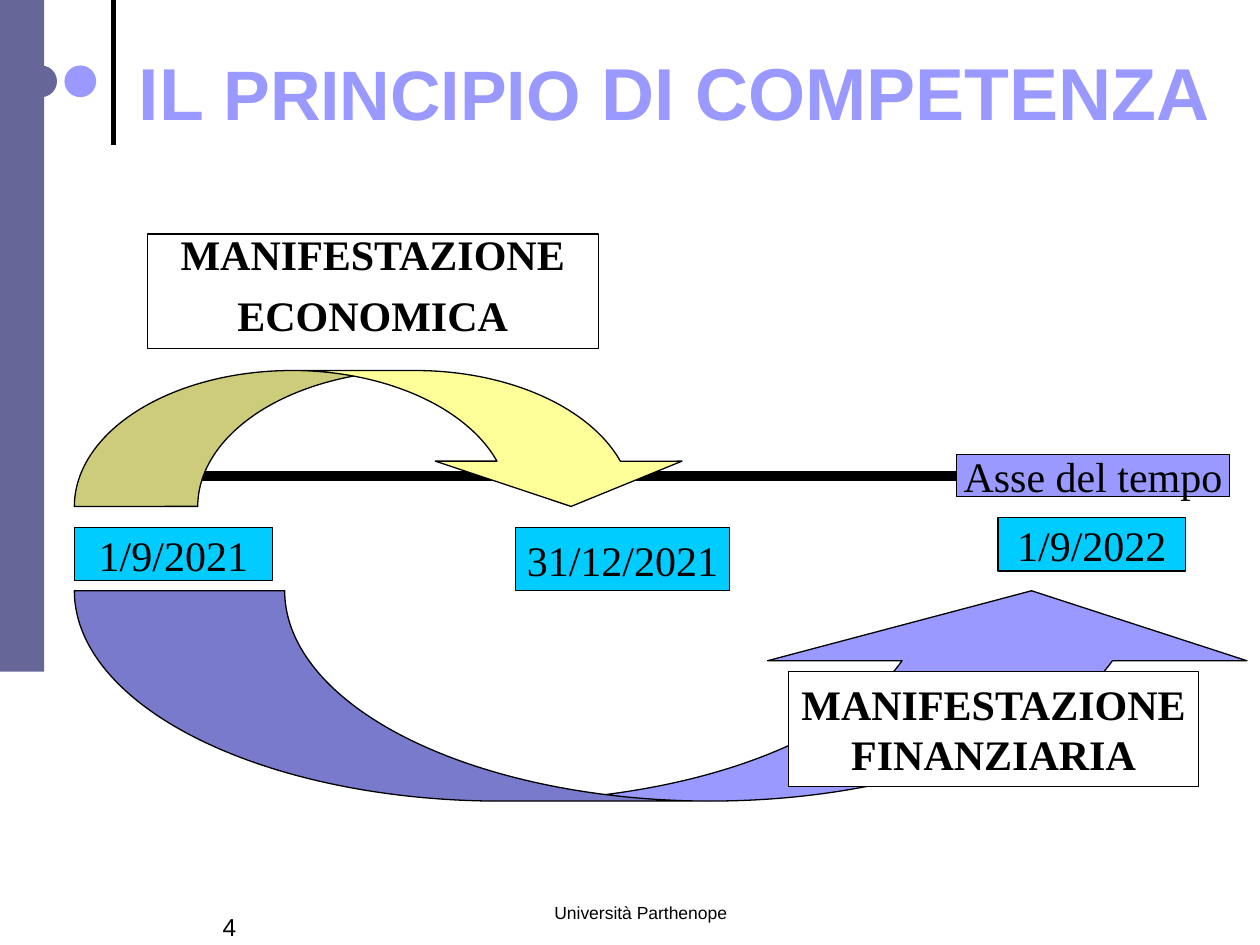
from lxml import etree
from pptx import Presentation
from pptx.dml.color import RGBColor
from pptx.enum.shapes import MSO_CONNECTOR, MSO_SHAPE
from pptx.enum.text import MSO_ANCHOR, PP_ALIGN
from pptx.oxml.ns import qn
from pptx.util import Cm, Pt

RECT, OVAL = MSO_SHAPE.RECTANGLE, MSO_SHAPE.OVAL
ARROW_UP, ARROW_DOWN = MSO_SHAPE.CURVED_UP_ARROW, MSO_SHAPE.CURVED_DOWN_ARROW
STRAIGHT = MSO_CONNECTOR.STRAIGHT
LEFT, CENTER = PP_ALIGN.LEFT, PP_ALIGN.CENTER
TOP, MIDDLE = MSO_ANCHOR.TOP, MSO_ANCHOR.MIDDLE

SANS, SERIF = "Arial", "Times New Roman"
COLORS = {
    "black": "000000", "white": "FFFFFF", "slate": "666699",
    "lilac": "9999FF", "cyan": "00CCFF", "yellow": "FFFF99",
}

# Boxes are left, top, width, height in cm
DECORATIONS = [
    (OVAL, (0.51, 1.32, 0.64, 0.64), "slate"),
    (OVAL, (1.3, 1.32, 0.64, 0.64), "lilac"),
    (RECT, (0, 0, 0.89, 13.54), "slate"),
]
TITLE_RULE = ((2.29, 2.92), (2.29, 0), 3)
TIME_AXIS = ((1.7, 9.6), (21.82, 9.6), 6)

TITLE_BOX = (2.29, 0.53, 22.61, 4.24)
TITLE = [("IL ", 42), ("PRINCIPIO", 40), (" DI COMPETENZA", 42)]
FOOTERS = [
    ((8.89, 18.06, 8.05, 1.27), "Università Parthenope", 10, CENTER),
    ((4.24, 18.26, 3.61, 1.27), "4", 14, LEFT),
]
AXIS_LABELS = [
    ((19.28, 9.17, 5.51, 0.84), "lilac", "Asse del tempo"),
    ((1.5, 10.64, 3.99, 1.07), "cyan", "1/9/2021"),
    ((10.39, 10.64, 4.32, 1.27), "cyan", "31/12/2021"),
    ((20.12, 10.44, 3.78, 1.07), "cyan", "1/9/2022"),
]
ARROWS = [
    (ARROW_UP, (1.5, 11.91, 24.13, 4.24), "lilac", (1.14, 2.28, 0.333)),
    (ARROW_DOWN, (1.5, 7.47, 12.5, 2.74), "yellow", (0.908, 1.815, 0.333)),
]
FINANCIAL_BOX = (15.9, 13.54, 8.26, 2.31)
FINANCIAL = ["MANIFESTAZIONE", "FINANZIARIA"]
ECONOMIC_BOX = (2.97, 4.72, 9.09, 2.31)
ECONOMIC = ["MANIFESTAZIONE", "ECONOMICA"]


def rgb(name):
    return RGBColor.from_string(COLORS[name])


def add_line(slide, start, end, width):
    line = slide.shapes.add_connector(STRAIGHT, *map(Cm, start + end))
    line.line.color.rgb = rgb("black")
    line.line.width = Pt(width)
    etree.SubElement(line._element.spPr, qn("a:effectLst"))


def add_shape(slide, kind, box, fill, outlined=True):
    sp = slide.shapes.add_shape(kind, *map(Cm, box))
    sp.shadow.inherit = False
    if fill:
        sp.fill.solid()
        sp.fill.fore_color.rgb = rgb(fill)
    else:
        sp.fill.background()
    if outlined:
        sp.line.color.rgb = rgb("black")
        sp.line.width = Pt(0.75)
    else:
        sp.line.fill.background()
    return sp


def write(sp, lines, font=SERIF, color="black", bold=False,
          align=CENTER, anchor=MIDDLE, wrap=False):
    """Fill a shape with lines, each a list of (text, size) runs."""
    tf = sp.text_frame
    tf.word_wrap = wrap
    tf.vertical_anchor = anchor
    for i, runs in enumerate(lines):
        p = tf.add_paragraph() if i else tf.paragraphs[0]
        p.alignment = align
        for text, size in runs:
            r = p.add_run()
            r.text = text
            r.font.name = font
            r.font.size = Pt(size)
            r.font.bold = bold
            r.font.color.rgb = rgb(color)
    return tf


def main():
    prs = Presentation()
    prs.slide_width, prs.slide_height = Cm(25.4), Cm(19.05)
    slide = prs.slides.add_slide(prs.slide_layouts[6])

    add_line(slide, *TITLE_RULE)
    for kind, box, fill in DECORATIONS:
        add_shape(slide, kind, box, fill, outlined=False)

    for box, text, size, align in FOOTERS:
        sp = slide.shapes.add_textbox(*map(Cm, box))
        write(sp, [[(text, size)]], SANS, align=align, anchor=TOP, wrap=True)

    title = slide.shapes.add_textbox(*map(Cm, TITLE_BOX))
    tf = write(title, [TITLE], SANS, "lilac", True, anchor=TOP, wrap=True)
    tf.margin_top = Cm(0.42)

    add_line(slide, *TIME_AXIS)
    for box, fill, text in AXIS_LABELS:
        write(add_shape(slide, RECT, box, fill), [[(text, 24)]])

    for kind, box, fill, adjustments in ARROWS:
        arrow = add_shape(slide, kind, box, fill)
        for i, value in enumerate(adjustments):
            arrow.adjustments[i] = value

    financial = add_shape(slide, RECT, FINANCIAL_BOX, "white")
    write(financial, [[(text, 24)] for text in FINANCIAL], bold=True)

    economic = add_shape(slide, RECT, ECONOMIC_BOX, None)
    tf = write(economic, [[(text, 24)] for text in ECONOMIC],
               bold=True, anchor=TOP, wrap=True)
    for p in tf.paragraphs:
        p.line_spacing = 0.75
    tf.paragraphs[1].space_before = Pt(13)

    prs.save("out.pptx")


if __name__ == "__main__":
    main()
